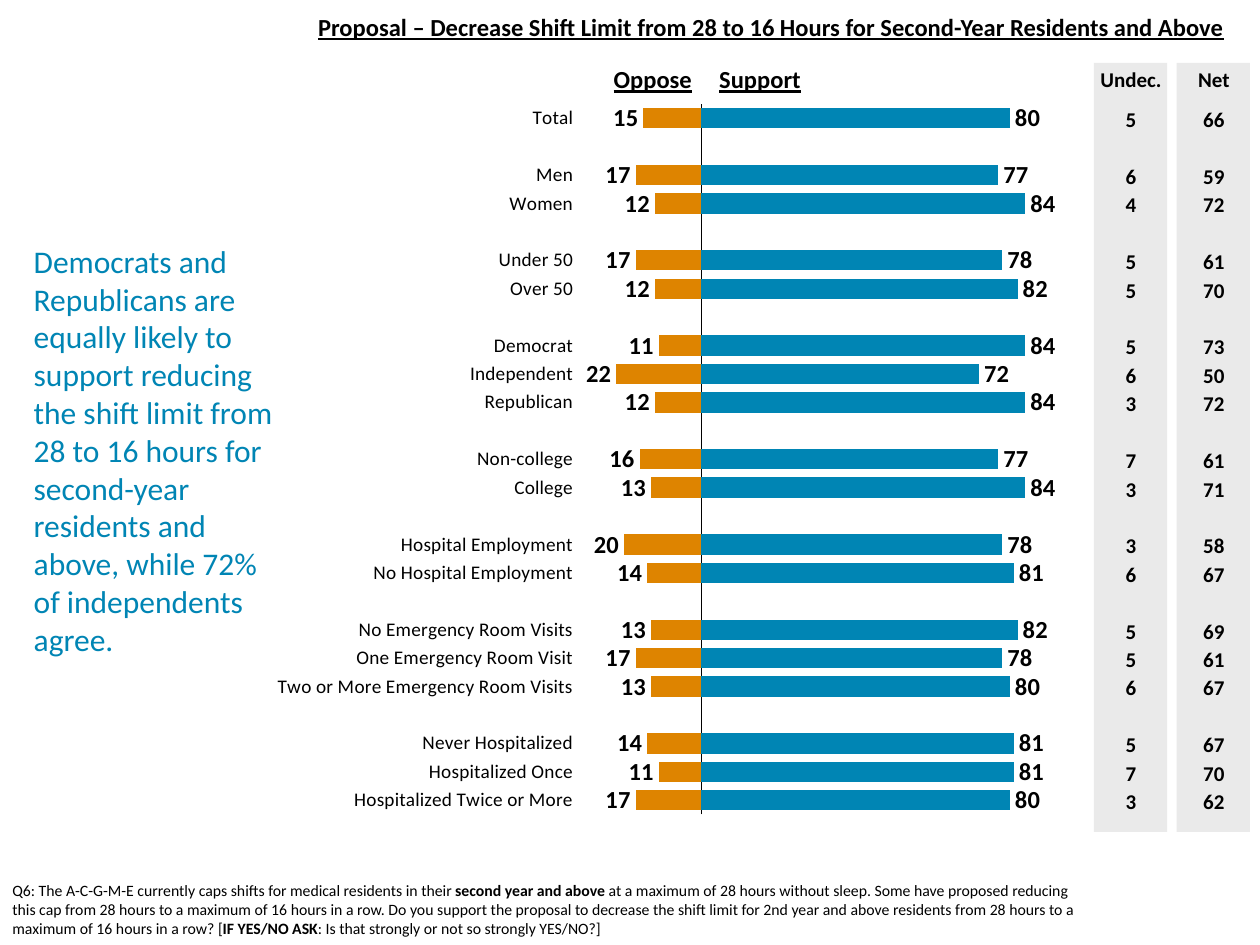
from copy import deepcopy
from dataclasses import dataclass

from lxml import etree
from pptx import Presentation, util as u
from pptx.chart.data import CategoryChartData
from pptx.dml.color import RGBColor
from pptx.enum import chart as ch, shapes, text
from pptx.oxml.ns import qn

HEADING = "Proposal – Decrease Shift Limit from 28 to 16 Hours for Second-Year Residents and Above"
FINDING = ("Democrats and Republicans are equally likely to support reducing the shift limit from "
           "28 to 16 hours for second-year residents and above, while 72% of independents agree.")
QUESTION = [  # (wording, bold)
    ("Q6: The A-C-G-M-E currently caps shifts for medical residents in their ", False),
    ("second year and above ", True),
    ("at a maximum of 28 hours without sleep. Some have proposed reducing this cap from 28 hours "
     "to a maximum of 16 hours in a row. Do you support the proposal to decrease the shift limit "
     "for 2nd year and above residents from 28 hours to a maximum of 16 hours in a row? [", False),
    ("IF YES/NO ASK", True),
    (": Is that strongly or not so strongly YES/NO?]", False),
]
GROUPS = [  # (respondents, oppose, support, undecided, net)
    [("Total", 15, 80, 5, 66)],
    [("Men", 17, 77, 6, 59), ("Women", 12, 84, 4, 72)],
    [("Under 50", 17, 78, 5, 61), ("Over 50", 12, 82, 5, 70)],
    [("Democrat", 11, 84, 5, 73), ("Independent", 22, 72, 6, 50), ("Republican", 12, 84, 3, 72)],
    [("Non-college", 16, 77, 7, 61), ("College", 13, 84, 3, 71)],
    [("Hospital Employment", 20, 78, 3, 58), ("No Hospital Employment", 14, 81, 6, 67)],
    [("No Emergency Room Visits", 13, 82, 5, 69), ("One Emergency Room Visit", 17, 78, 5, 61),
     ("Two or More Emergency Room Visits", 13, 80, 6, 67)],
    [("Never Hospitalized", 14, 81, 5, 67), ("Hospitalized Once", 11, 81, 7, 70),
     ("Hospitalized Twice or More", 17, 80, 3, 62)],
]
SIDE_COLUMNS = [("Undec.", 3, 22.05), ("Net", 4, 23.72)]  # (header, field, left)
BAR_HEADERS = [("Oppose", 12.12), ("Support", 14.25)]

# Chart frame in cm; plot area as fractions of it
CHART = dict(left=4.23, top=0.63, width=17.78, height=16.13)
PLOT = dict(x=0.426, y=0.091, w=0.547, h=0.888)
COLUMN_WIDTH, NUMBER_HEIGHT = 1.48, 0.51


@dataclass(frozen=True)
class Theme:
    font: str = "Calibri"
    ink: RGBColor = RGBColor(0, 0, 0)
    support: RGBColor = RGBColor(0x00, 0x85, 0xB4)
    oppose: RGBColor = RGBColor(0xDE, 0x84, 0x00)
    panel: RGBColor = RGBColor(0xEA, 0xEA, 0xEA)
    finding: float = 18
    heading: float = 14
    number: float = 12
    category: float = 11
    question: float = 9


THEME = Theme()


def style(font, size, color=THEME.ink, bold=None, underline=None):
    font.name, font.size, font.bold = THEME.font, u.Pt(size), bold
    font.color.rgb = color
    if underline:
        font.underline = True


def add_text(slide, runs, box, size, align=None, inset=None, anchor=None, **look):
    """Write (wording, bold) runs as one paragraph; box is left, top, width, height in cm."""
    frame = slide.shapes.add_textbox(*map(u.Cm, box)).text_frame
    frame.word_wrap = True
    frame.vertical_anchor = anchor
    if inset is not None:
        frame.margin_left = frame.margin_right = frame.margin_top = frame.margin_bottom = inset
    paragraph = frame.paragraphs[0]
    paragraph.alignment = align
    style(paragraph.font, size, **look)
    for wording, bold in runs:
        run = paragraph.add_run()
        run.text = wording
        if bold:
            run.font.bold = True


def spaced_rows():
    """List all rows with None between groups."""
    rows = []
    for group in GROUPS:
        rows += [None] * bool(rows) + group
    return rows


def fix_plot_area(chart):
    area = chart._chartSpace.chart.plotArea
    for old in area.findall(qn("c:layout")):
        area.remove(old)
    layout = etree.Element(qn("c:layout"))
    area.insert(0, layout)
    manual = etree.SubElement(layout, qn("c:manualLayout"))
    settings = dict(layoutTarget="inner", xMode="edge", yMode="edge", **PLOT)
    for name, value in settings.items():
        etree.SubElement(manual, qn(f"c:{name}")).set("val", str(value))


def move_support_to_second_axis(chart):
    """Give the last series its own bar plot and a hidden pair of axes on the same scale."""
    area = chart._chartSpace.chart.plotArea
    bars = area.find(qn("c:barChart"))
    axes = [area.find(qn("c:catAx")), area.find(qn("c:valAx"))]
    new_ids = {axis.find(qn("c:axId")).get("val"): str(5001 + i) for i, axis in enumerate(axes)}
    second_bars, *second_axes = [deepcopy(part) for part in (bars, *axes)]

    bars.remove(bars.findall(qn("c:ser"))[-1])
    second_bars.remove(second_bars.find(qn("c:ser")))
    bars.addnext(second_bars)
    for axis in second_axes:
        axis.find(qn("c:delete")).set("val", "1")
        axes[-1].addnext(axis)
    for part in (second_bars, *second_axes):
        for reference in part.iter(qn("c:axId"), qn("c:crossAx")):
            reference.set("val", new_ids[reference.get("val")])


def add_bars(slide, rows):
    data = CategoryChartData()
    data.categories = [row[0] if row else "" for row in rows]
    data.add_series("Series 1", [-row[1] if row else None for row in rows])
    data.add_series("Series 2", [row[2] if row else None for row in rows])
    chart = slide.shapes.add_chart(
        ch.XL_CHART_TYPE.BAR_CLUSTERED, *map(u.Cm, CHART.values()), data).chart
    chart.has_legend = chart.has_title = False
    style(chart.font, THEME.category)
    fix_plot_area(chart)

    respondents, percent = chart.category_axis, chart.value_axis
    respondents.reverse_order = True
    respondents.tick_label_position = ch.XL_TICK_LABEL_POSITION.LOW
    respondents.major_tick_mark = respondents.minor_tick_mark = ch.XL_TICK_MARK.NONE
    respondents.format.line.color.rgb = THEME.ink
    respondents.format.line.width = u.Pt(0.29)
    style(respondents.tick_labels.font, THEME.category)
    percent.minimum_scale, percent.maximum_scale = -30, 95
    percent.has_major_gridlines = False
    percent.visible = False

    plot = chart.plots[0]
    plot.gap_width, plot.overlap, plot.vary_by_categories = 40, 100, False
    looks = [(THEME.oppose, "#,##0_);[Black]General"), (THEME.support, "General")]
    for series, (color, number_format) in zip(plot.series, looks):
        series.invert_if_negative = False
        series.format.fill.solid()
        series.format.fill.fore_color.rgb = color
        labels = series.data_labels
        labels.show_value = True
        labels.number_format, labels.number_format_is_linked = number_format, False
        labels.position = ch.XL_LABEL_POSITION.OUTSIDE_END
        style(labels.font, THEME.heading, bold=True)
    move_support_to_second_axis(chart)


def add_side_column(slide, header, field, left, rows):
    panel = slide.shapes.add_shape(
        shapes.MSO_SHAPE.RECTANGLE, *map(u.Cm, (left, 1.27, COLUMN_WIDTH, 15.5)))
    panel.shadow.inherit = False
    panel.fill.solid()
    panel.fill.fore_color.rgb = THEME.panel
    panel.line.fill.background()

    plot_top = CHART["top"] + PLOT["y"] * CHART["height"]
    pitch = PLOT["h"] * CHART["height"] / len(rows)
    entries = [(header, 1.34)]
    for index, row in enumerate(rows):
        if row:
            middle = plot_top + (index + 0.5) * pitch
            entries.append((str(row[field]), middle - NUMBER_HEIGHT / 2 + 0.02))
    for wording, top in entries:
        add_text(slide, [(wording, False)], (left + 0.01, top, COLUMN_WIDTH, NUMBER_HEIGHT),
                 THEME.number, text.PP_ALIGN.CENTER, inset=0, bold=True)


def main():
    deck = Presentation()
    deck.slide_width, deck.slide_height = u.Cm(25.4), u.Cm(19.05)
    slide = deck.slides.add_slide(deck.slide_layouts[6])
    rows = spaced_rows()

    add_text(slide, [(FINDING, False)], (0.43, 0.85, 5.49, 16.43), THEME.finding,
             anchor=text.MSO_ANCHOR.MIDDLE, color=THEME.support)
    add_bars(slide, rows)
    for header, field, left in SIDE_COLUMNS:
        add_side_column(slide, header, field, left, rows)
    add_text(slide, [(HEADING, False)], (5.87, 0.11, 19.35, 0.86), THEME.heading,
             text.PP_ALIGN.CENTER, bold=True, underline=True)
    for header, left in BAR_HEADERS:
        add_text(slide, [(header, False)], (left, 1.17, 2.39, 0.86), THEME.heading,
                 bold=True, underline=True)
    add_text(slide, QUESTION, (0, 17.63, 22.02, 1.42), THEME.question)
    deck.save("out.pptx")


if __name__ == "__main__":
    main()
